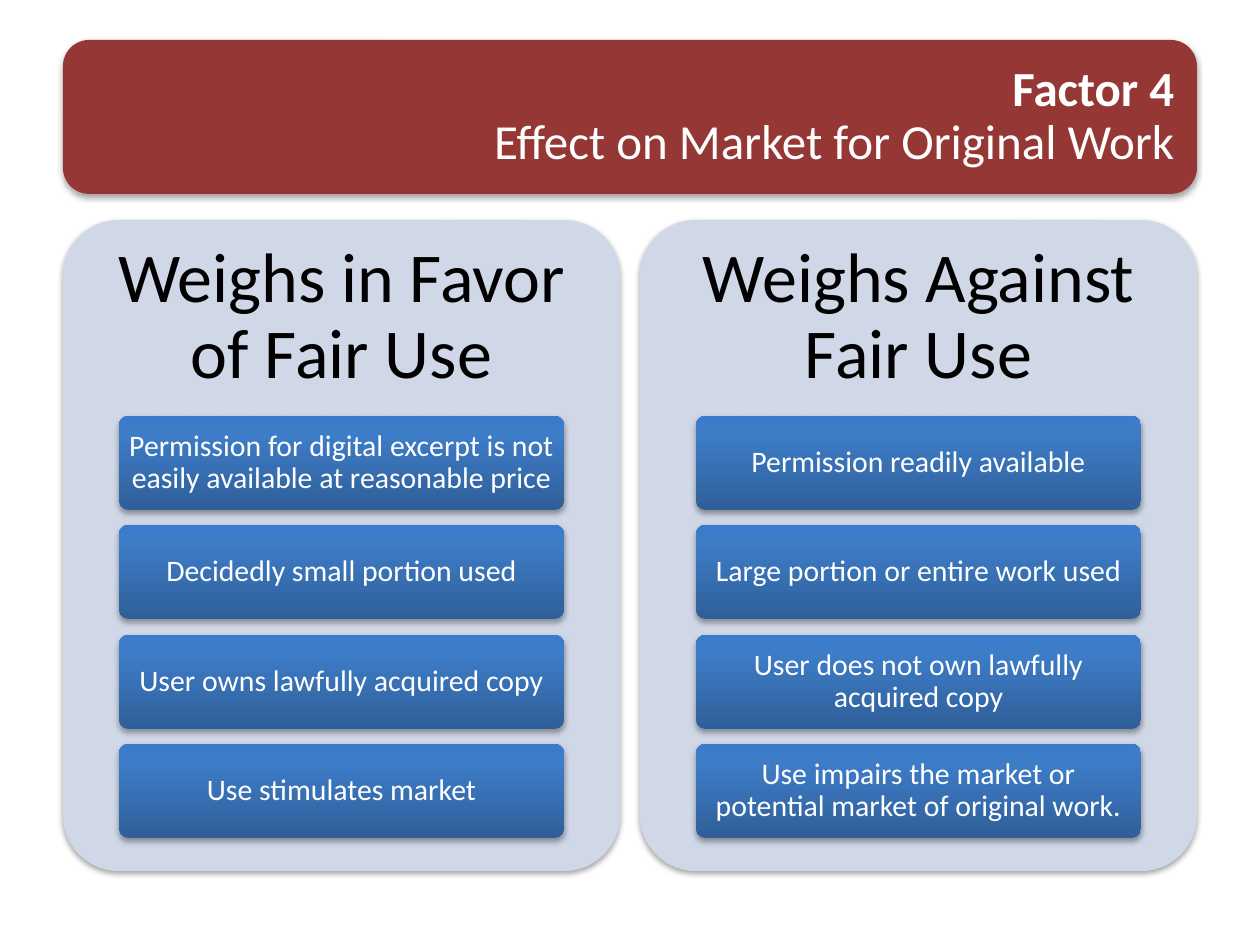
"""Build the fair use slide on Factor 4, the effect on the market."""
from copy import deepcopy
from typing import NamedTuple

from lxml.etree import SubElement
from pptx import Presentation
from pptx.dml.color import RGBColor
from pptx.enum.shapes import MSO_SHAPE as Shape
from pptx.enum.text import MSO_ANCHOR as Anchor, PP_ALIGN as Align
from pptx.oxml.ns import qn
from pptx.util import Emu, Pt

EMU_PER_INCH = 914400
PX_PER_INCH = 126
FONT = "Calibri"
WHITE, BLACK, RED, PALE = "FFFFFF", "000000", "953735", "D0D8E8"
CARD_STOPS = [(0, "2F5F99"), (0.8, "3D7CC7"), (1, "3A7CCB")]
CARD_TOP, CARD_SPAN = 416, 328


class Area(NamedTuple):
    left: int
    top: int
    width: int
    height: int


class Line(NamedTuple):
    text: str
    bold: bool = False


class Style(NamedTuple):
    size: int
    color: str
    align: Align
    inset_x: int
    inset_y: int


class Panel(NamedTuple):
    left: int
    title: str
    cards: list[str]


HEADER_STYLE = Style(28, WHITE, Align.RIGHT, 15, 15)
TITLE_STYLE = Style(40, BLACK, Align.CENTER, 21, 21)
CARD_STYLE = Style(17, WHITE, Align.CENTER, 6, 5)

HEADER = [Line("Factor 4", True), Line("Effect on Market for Original Work")]
PANELS = [
    Panel(63, "Weighs in Favor of Fair Use", [
        "Permission for digital excerpt is not easily available at reasonable price",
        "Decidedly small portion used",
        "User owns lawfully acquired copy",
        "Use stimulates market",
    ]),
    Panel(640, "Weighs Against Fair Use", [
        "Permission readily available",
        "Large portion or entire work used",
        "User does not own lawfully acquired copy",
        "Use impairs the market or potential market of original work.",
    ]),
]


def px(length: int) -> Emu:
    """Turn pixels into EMU."""
    return Emu(round(length * EMU_PER_INCH / PX_PER_INCH))


def rgb(color: str) -> RGBColor:
    """Turn a hex string into a colour."""
    return RGBColor.from_string(color)


def add_shadow(box) -> None:
    """Give a box a soft shadow just below it."""
    box.shadow.inherit = False
    effects = box._element.spPr.find(qn("a:effectLst"))
    shadow = SubElement(effects, qn("a:outerShdw"), blurRad="39370", dist="22860",
                        dir="5400000", rotWithShape="0")
    color = SubElement(shadow, qn("a:srgbClr"), val=BLACK)
    SubElement(color, qn("a:alpha"), val="35000")


def add_box(slide, area: Area, fill: str | None = None, corner: float = 0.1):
    """Add a rounded box with a plain fill, or the card gradient if none is given."""
    box = slide.shapes.add_shape(Shape.ROUNDED_RECTANGLE, *map(px, area))
    box.adjustments[0] = corner
    box.line.fill.background()
    add_shadow(box)
    if fill:
        box.fill.solid()
        box.fill.fore_color.rgb = rgb(fill)
        return box
    box.fill.gradient()
    box.fill.gradient_angle = 90
    stop_list = box._element.spPr.find(".//" + qn("a:gsLst"))
    stop_list.append(deepcopy(stop_list[-1]))
    for stop, (position, color) in zip(box.fill.gradient_stops, CARD_STOPS):
        stop.position = position
        stop.color.rgb = rgb(color)
    return box


def write(box, lines: list[Line], style: Style) -> None:
    """Write lines into a box as one paragraph, centred vertically."""
    frame = box.text_frame
    frame.word_wrap = True
    frame.vertical_anchor = Anchor.MIDDLE
    frame.margin_left = frame.margin_right = px(style.inset_x)
    frame.margin_top = frame.margin_bottom = px(style.inset_y)
    para = frame.paragraphs[0]
    para.alignment = style.align
    para.line_spacing = 0.9
    for index, line in enumerate(lines):
        if index:
            para.add_line_break()
        span = para.add_run()
        span.text = line.text
        span.font.name = FONT
        span.font.size = Pt(style.size)
        span.font.bold = line.bold
        span.font.color.rgb = rgb(style.color)


def add_panel(slide, panel: Panel) -> None:
    """Add a panel with its title and evenly spaced cards."""
    add_box(slide, Area(panel.left, 220, 557, 651), PALE)
    title = slide.shapes.add_textbox(*map(px, Area(panel.left, 220, 557, 195)))
    write(title, [Line(panel.title)], TITLE_STYLE)
    for index, text in enumerate(panel.cards):
        top = CARD_TOP + round(index * CARD_SPAN / (len(panel.cards) - 1))
        card = add_box(slide, Area(panel.left + 56, top, 445, 94))
        write(card, [Line(text)], CARD_STYLE)


def main() -> None:
    """Build and save the deck."""
    deck = Presentation()
    deck.slide_width, deck.slide_height = px(1260), px(945)
    slide = deck.slides.add_slide(deck.slide_layouts[6])
    header = add_box(slide, Area(63, 40, 1134, 154), RED, 0.17)
    write(header, HEADER, HEADER_STYLE)
    for panel in PANELS:
        add_panel(slide, panel)
    deck.save("out.pptx")


if __name__ == "__main__":
    main()
